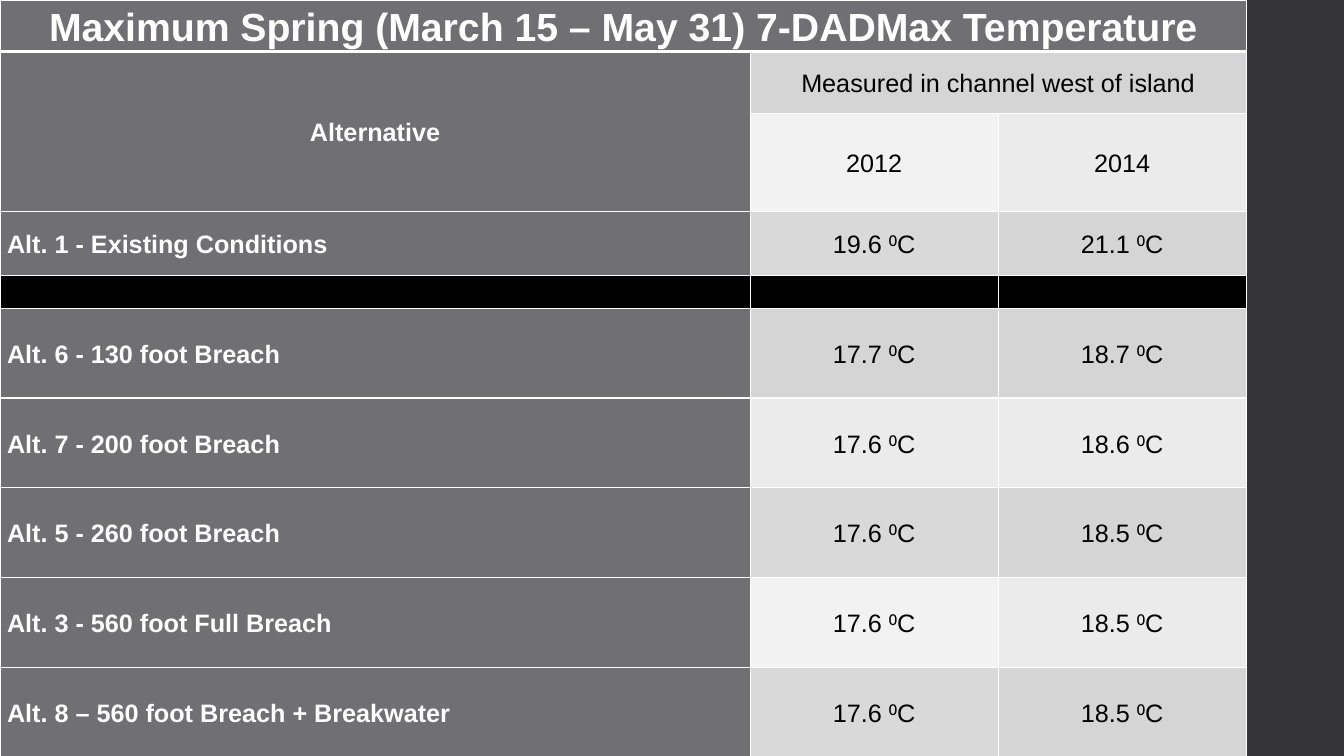
from lxml.etree import SubElement
from pptx import Presentation
from pptx.dml.color import RGBColor
from pptx.enum.shapes import MSO_SHAPE
from pptx.enum.text import MSO_ANCHOR, PP_ALIGN
from pptx.oxml.ns import qn
from pptx.util import Inches, Pt

COLORS = {
    "white": "FFFFFF",
    "black": "000000",
    "heading": "6F6F74",
    "sidebar": "353537",
    "silver": "D5D5D6",
    "gray": "D9D9D9",
    "light": "EBEBEB",
    "pale": "F2F2F2",
}
COLUMN_WIDTHS = [7.44, 2.46, 2.46]
ROW_HEIGHTS = [0.51, 0.62, 0.97, 0.63, 0.33] + [0.89] * 5
FIRST_ALTERNATIVE_ROW = 3
ALTERNATIVES = [
    ("Alt. 1 - Existing Conditions", "19.6", "gray", "21.1", "silver"),
    None,
    ("Alt. 6 - 130 foot Breach", "17.7", "silver", "18.7", "silver"),
    ("Alt. 7 - 200 foot Breach", "17.6", "light", "18.6", "light"),
    ("Alt. 5 - 260 foot Breach", "17.6", "gray", "18.5", "silver"),
    ("Alt. 3 - 560 foot Full Breach", "17.6", "pale", "18.5", "light"),
    ("Alt. 8 – 560 foot Breach + Breakwater", "17.6", "gray", "18.5", "silver"),
]


def color(name):
    return RGBColor.from_string(COLORS[name])


def add_sidebar(page):
    sidebar = page.shapes.add_shape(
        MSO_SHAPE.RECTANGLE, Inches(12.35), 0, Inches(0.98), Inches(7.5))
    sidebar.shadow.inherit = False
    sidebar.fill.solid()
    sidebar.fill.fore_color.rgb = color("sidebar")
    sidebar.line.fill.background()


def add_grid(page):
    frame = page.shapes.add_table(
        len(ROW_HEIGHTS), len(COLUMN_WIDTHS), 0, 0,
        Inches(sum(COLUMN_WIDTHS)), Inches(sum(ROW_HEIGHTS)))
    table = frame.table
    for column, width in zip(table.columns, COLUMN_WIDTHS):
        column.width = Inches(width)
    for row, height in zip(table.rows, ROW_HEIGHTS):
        row.height = Inches(height)
    return table


def add_border(cell, side, width):
    line = SubElement(cell._tc.get_or_add_tcPr(), qn(f"a:ln{side}"), w=str(Pt(width)))
    fill = SubElement(line, qn("a:solidFill"))
    SubElement(fill, qn("a:srgbClr"), val=COLORS["white"])


def add_borders(table):
    for index, row in enumerate(table.rows):
        widths = {"L": 1, "R": 1, "T": 3 if index == 1 else 1, "B": 3 if index == 0 else 1}
        for cell in row.cells:
            for side, width in widths.items():
                add_border(cell, side, width)


def write_cell(cell, text, fill, size=18, font_color="black", bold=False,
               align=PP_ALIGN.CENTER):
    cell.fill.solid()
    cell.fill.fore_color.rgb = color(fill)
    cell.vertical_anchor = MSO_ANCHOR.MIDDLE
    cell.margin_left = cell.margin_right = Inches(0.07)
    cell.margin_top = cell.margin_bottom = 0
    if not text:
        return
    para = cell.text_frame.paragraphs[0]
    para.alignment = align
    para.line_spacing = 1.1
    span = para.add_run()
    span.text = text
    span.font.name = "Arial"
    span.font.size = Pt(size)
    span.font.bold = bold
    span.font.color.rgb = color(font_color)


def write_heading(cell, text, **formats):
    write_cell(cell, text, "heading", font_color="white", bold=True, **formats)


def write_headings(table):
    table.cell(0, 0).merge(table.cell(0, 2))
    table.cell(1, 0).merge(table.cell(2, 0))
    table.cell(1, 1).merge(table.cell(1, 2))
    write_heading(table.cell(0, 0),
                  "Maximum Spring (March 15 – May 31) 7-DADMax Temperature", size=28)
    write_heading(table.cell(1, 0), "Alternative")
    write_cell(table.cell(1, 1), "Measured in channel west of island", "silver")
    write_cell(table.cell(2, 1), "2012", "pale")
    write_cell(table.cell(2, 2), "2014", "light")


def write_alternatives(table):
    for row, alternative in enumerate(ALTERNATIVES, FIRST_ALTERNATIVE_ROW):
        if alternative is None:
            for cell in table.rows[row].cells:
                write_cell(cell, "", "black")
            continue
        name, value_2012, fill_2012, value_2014, fill_2014 = alternative
        write_heading(table.cell(row, 0), name, align=PP_ALIGN.LEFT)
        write_cell(table.cell(row, 1), f"{value_2012} ⁰C", fill_2012)
        write_cell(table.cell(row, 2), f"{value_2014} ⁰C", fill_2014)


def main():
    deck = Presentation()
    deck.slide_width = Inches(13.33)
    deck.slide_height = Inches(7.5)
    page = deck.slides.add_slide(deck.slide_layouts[6])
    add_sidebar(page)
    table = add_grid(page)
    add_borders(table)
    write_headings(table)
    write_alternatives(table)
    deck.save("out.pptx")


if __name__ == "__main__":
    main()
